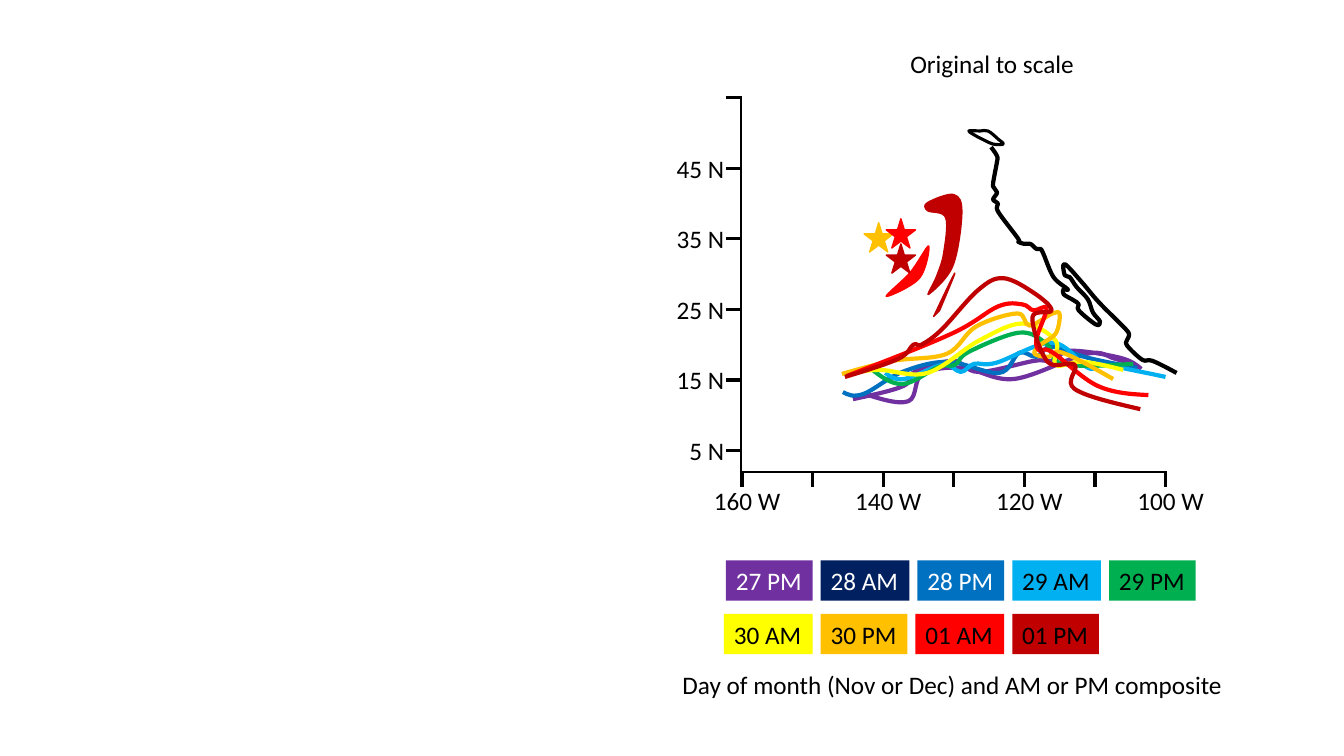
from lxml import etree
from pptx import Presentation
from pptx.dml.color import RGBColor
from pptx.enum.shapes import MSO_CONNECTOR, MSO_SHAPE
from pptx.enum.text import MSO_AUTO_SIZE, PP_ALIGN
from pptx.oxml.ns import qn
from pptx.util import Inches, Pt

RECT, STAR = MSO_SHAPE.RECTANGLE, MSO_SHAPE.STAR_5_POINT
STRAIGHT = MSO_CONNECTOR.STRAIGHT
FIT = MSO_AUTO_SIZE.SHAPE_TO_FIT_TEXT
LEFT, CENTER, RIGHT = PP_ALIGN.LEFT, PP_ALIGN.CENTER, PP_ALIGN.RIGHT

BLACK, WHITE = RGBColor(0, 0, 0), RGBColor(255, 255, 255)
PURPLE, NAVY = RGBColor(0x70, 0x30, 0xA0), RGBColor(0x00, 0x20, 0x60)
BLUE, SKY = RGBColor(0x00, 0x70, 0xC0), RGBColor(0x00, 0xB0, 0xF0)
GREEN, YELLOW = RGBColor(0x00, 0xB0, 0x50), RGBColor(0xFF, 0xFF, 0x00)
AMBER, RED = RGBColor(0xFF, 0xC0, 0x00), RGBColor(0xFF, 0x00, 0x00)
CRIMSON = RGBColor(0xC0, 0x00, 0x00)

# Content: lengths in inches
TITLE = "Original to scale"
CAPTION = "Day of month (Nov or Dec) and AM or PM composite"
LATITUDES = [None, "45 N", "35 N", "25 N", "15 N", "5 N"]
LONGITUDES = ["160 W", None, "140 W", None, "120 W", None, "100 W"]

LEGEND = [  # left, top, keys
    (7.2, 5.56, [("27 PM", PURPLE, WHITE), ("28 AM", NAVY, WHITE),
                 ("28 PM", BLUE, WHITE), ("29 AM", SKY, BLACK),
                 ("29 PM", GREEN, BLACK)]),
    (7.18, 6.09, [("30 AM", YELLOW, BLACK), ("30 PM", AMBER, BLACK),
                  ("01 AM", RED, BLACK), ("01 PM", CRIMSON, BLACK)]),
]

TRACKS = [  # colour, points the curve passes through
    (PURPLE, [(8.61, 3.92), (9.01, 3.98), (9.15, 3.71), (9.55, 3.65),
              (10.06, 3.76), (10.78, 3.51), (11.06, 3.56), (11.29, 3.64)]),
    (PURPLE, [(8.46, 3.96), (8.96, 3.83), (9.07, 3.69), (9.45, 3.58),
              (9.71, 3.69), (10.26, 3.58), (10.44, 3.58), (10.62, 3.48),
              (11.11, 3.55), (11.32, 3.66)]),
    (BLUE, [(8.36, 3.89), (8.56, 3.91), (8.95, 3.69), (9.4, 3.59), (9.91, 3.7),
            (10.11, 3.5), (10.28, 3.54), (10.43, 3.44), (10.79, 3.55),
            (11.28, 3.65)]),
    (SKY, [(8.78, 3.7), (8.97, 3.76), (9.35, 3.62), (9.53, 3.69), (9.66, 3.61),
           (9.88, 3.6), (10.44, 3.4), (10.79, 3.65), (10.94, 3.62),
           (11.32, 3.69), (11.56, 3.74)]),
    (GREEN, [(8.64, 3.66), (8.95, 3.81), (9.31, 3.64), (9.47, 3.62),
             (9.61, 3.49), (10.11, 3.3), (10.38, 3.41), (10.54, 3.61),
             (11.24, 3.61)]),
    (YELLOW, [(8.44, 3.71), (8.72, 3.67), (9.2, 3.7), (9.71, 3.38),
              (10.14, 3.21), (10.47, 3.38), (10.47, 3.62), (10.74, 3.59),
              (11.14, 3.67)]),
    (AMBER, [(8.35, 3.71), (8.86, 3.58), (9.39, 3.51), (9.68, 3.24),
             (10.09, 3.11), (10.21, 3.23), (10.44, 3.11), (10.51, 3.12),
             (10.47, 3.31), (10.32, 3.42), (10.26, 3.51), (10.4, 3.54),
             (10.54, 3.5), (11.04, 3.76)]),
    (RED, [(8.4, 3.73), (9.44, 3.31), (9.9, 3.04), (10.14, 3.02), (10.25, 3.08),
           (10.38, 3.06), (10.28, 3.36), (10.31, 3.48), (10.43, 3.49),
           (10.89, 3.83), (11.39, 3.92)]),
    (CRIMSON, [(8.38, 3.74), (8.91, 3.56), (9.06, 3.42), (9.14, 3.42),
               (9.34, 3.27), (9.7, 2.88), (9.95, 2.76), (10.26, 2.91),
               (10.43, 3.08), (10.24, 3.15), (10.39, 3.59), (10.66, 3.62),
               (10.66, 3.86), (11.31, 4.06)]),
]

RED_CRESCENT = [(8.79, 2.94), (9.03, 2.7), (9.21, 2.44), (9.12, 2.76)]
CRIMSON_HOOK = [(9.2, 2.01), (9.46, 1.93), (9.54, 2.11), (9.45, 2.64),
                (9.21, 2.92), (9.29, 2.74), (9.36, 2.51), (9.38, 2.16),
                (9.2, 2.09)]
CRIMSON_SLIVER = [(9.32, 3.08), (9.47, 2.71), (9.26, 3.14)]
STARS = [(8.57, 2.21, AMBER), (8.79, 2.17, RED), (8.79, 2.42, CRIMSON)]
STAR_SIZE = 0.29

ISLAND = [(9.61, 1.3), (9.7, 1.36), (9.76, 1.39), (9.85, 1.43), (9.95, 1.43),
          (9.9, 1.38), (9.8, 1.3), (9.72, 1.3)]
COAST = [(9.83, 1.46), (9.89, 1.55), (9.89, 1.6), (9.86, 1.76), (9.85, 1.85),
         (9.89, 1.91), (9.85, 1.98), (9.9, 2.02), (9.9, 2.1), (10.1, 2.37),
         (10.1, 2.4), (10.16, 2.42), (10.22, 2.42), (10.28, 2.47),
         (10.32, 2.47), (10.35, 2.52), (10.45, 2.75), (10.59, 2.87),
         (10.55, 2.87), (10.55, 2.92), (10.65, 2.98), (10.7, 3.02),
         (10.7, 3.08), (10.87, 3.22), (10.91, 3.19), (10.84, 3.1),
         (10.79, 2.97), (10.68, 2.85), (10.61, 2.75), (10.56, 2.73),
         (10.56, 2.62), (10.73, 2.8), (10.9, 3), (11.15, 3.25), (11.2, 3.32),
         (11.18, 3.37), (11.18, 3.43), (11.33, 3.57), (11.43, 3.58),
         (11.67, 3.7)]

# Axes
AXIS_X, AXIS_Y = 7.35, 4.68
FIRST_LAT, FIRST_LON, TICK_STEP, TICK = 0.97, 7.36, 0.7, 0.15
KEY_WIDTH, KEY_GAP, TEXT_HEIGHT = {"AM": 0.88, "PM": 0.86}, 0.08, 0.4


def spline(points, closed):
    """Bezier stretches through the points, each tangent parallel to its neighbours' chord."""
    n = len(points)
    stretches = []
    for i in range(n if closed else n - 1):
        before, a, b, after = (points[j % n] for j in range(i - 1, i + 3))
        c1 = [p + (q - o) / 6 for o, p, q in zip(before, a, b)]
        c2 = [q - (r - p) / 6 for p, q, r in zip(a, b, after)]
        if not closed and i == 0:
            c1 = [(p + c) / 2 for p, c in zip(a, c2)]
        if not closed and i == n - 2:
            c2 = [(q + c) / 2 for q, c in zip(b, c1)]
        stretches.append((c1, c2, b))
    return stretches


def paint(s, line, width, fill=None):
    s.shadow.inherit = False
    if fill is None:
        s.fill.background()
    else:
        s.fill.solid()
        s.fill.fore_color.rgb = fill
    s.line.color.rgb = line
    s.line.width = Pt(width)


def add_curve(shapes, points, line, width, fill=None, closed=False):
    stretches = spline(points, closed)
    corners = [(Inches(x), Inches(y)) for x, y in [points[0]] + [b for _, _, b in stretches]]
    builder = shapes.build_freeform(*corners[0], scale=1.0)
    builder.add_line_segments(corners[1:], close=closed or fill is not None)
    s = builder.convert_to_shape()
    # Bend each straight segment into its Bezier stretch
    left, top = (min(axis) for axis in zip(*corners))
    for segment, stretch in zip(list(s._element.iter(qn("a:lnTo"))), stretches):
        bend = etree.Element(qn("a:cubicBezTo"))
        for x, y in stretch:
            etree.SubElement(bend, qn("a:pt"), x=str(Inches(x) - left), y=str(Inches(y) - top))
        segment.getparent().replace(segment, bend)
    paint(s, line, width, fill)


def add_line(shapes, x1, y1, x2, y2, width):
    s = shapes.add_connector(STRAIGHT, *map(Inches, (x1, y1, x2, y2)))
    s.line.color.rgb = BLACK
    s.line.width = Pt(width)
    etree.SubElement(s._element.spPr, qn("a:effectLst"))


def write(s, text, color=BLACK, align=LEFT):
    tf = s.text_frame
    tf.text = text
    tf.word_wrap = False
    tf.auto_size = FIT
    p = tf.paragraphs[0]
    p.alignment = align
    font = p.runs[0].font
    font.name, font.size, font.color.rgb = "Calibri", Pt(18), color


def add_label(shapes, text, x, y, w, align=LEFT):
    write(shapes.add_textbox(*map(Inches, (x, y, w, TEXT_HEIGHT))), text, align=align)


prs = Presentation()
prs.slide_width, prs.slide_height = Inches(13.33), Inches(7.5)
slide = prs.slides.add_slide(prs.slide_layouts[6])

# Legend: keys side by side, equal gaps
for x, y, keys in LEGEND:
    for text, fill, color in keys:
        w = KEY_WIDTH[text[-2:]]
        s = slide.shapes.add_shape(RECT, *map(Inches, (x, y, w, TEXT_HEIGHT)))
        s.shadow.inherit = False
        s.fill.solid()
        s.fill.fore_color.rgb = fill
        s.line.fill.background()
        write(s, text, color)
        x += w + KEY_GAP

# Map: tracks, regions, stars, coast
chart = slide.shapes.add_group_shape().shapes
for color, points in TRACKS:
    add_curve(chart, points, color, 3)
add_curve(chart, RED_CRESCENT, RED, 1, RED, closed=True)
add_curve(chart, CRIMSON_HOOK, CRIMSON, 1, CRIMSON, closed=True)
add_curve(chart, CRIMSON_SLIVER, CRIMSON, 1, CRIMSON)
for x, y, color in STARS:
    s = chart.add_shape(STAR, *map(Inches, (x, y, STAR_SIZE, STAR_SIZE)))
    paint(s, color, 1, color)
add_curve(chart, ISLAND, BLACK, 2.25, closed=True)
add_curve(chart, COAST, BLACK, 3)

# Axes with ticks and labels
add_line(chart, AXIS_X, AXIS_Y, 11.57, AXIS_Y, 1.5)
add_line(chart, AXIS_X, 0.95, AXIS_X, AXIS_Y, 1.5)
for i, text in enumerate(LONGITUDES):
    x = FIRST_LON + i * TICK_STEP
    add_line(chart, x, AXIS_Y + TICK, x, AXIS_Y, 2.25)
    if text:
        add_label(chart, text, x + 0.05 - 0.87 / 2, 4.77, 0.87, CENTER)
for i, text in enumerate(LATITUDES):
    y = FIRST_LAT + i * TICK_STEP
    add_line(chart, AXIS_X - TICK, y, AXIS_X, y, 2.25)
    if text:
        w = 0.68 if len(text) == 4 else 0.55
        add_label(chart, text, 7.28 - w, y - TEXT_HEIGHT / 2, w, RIGHT)

# Caption and title
add_label(slide.shapes, CAPTION, 6.67, 6.59, 5.62)
add_label(slide.shapes, TITLE, 8.93, 0.43, 1.84)

prs.save("out.pptx")
